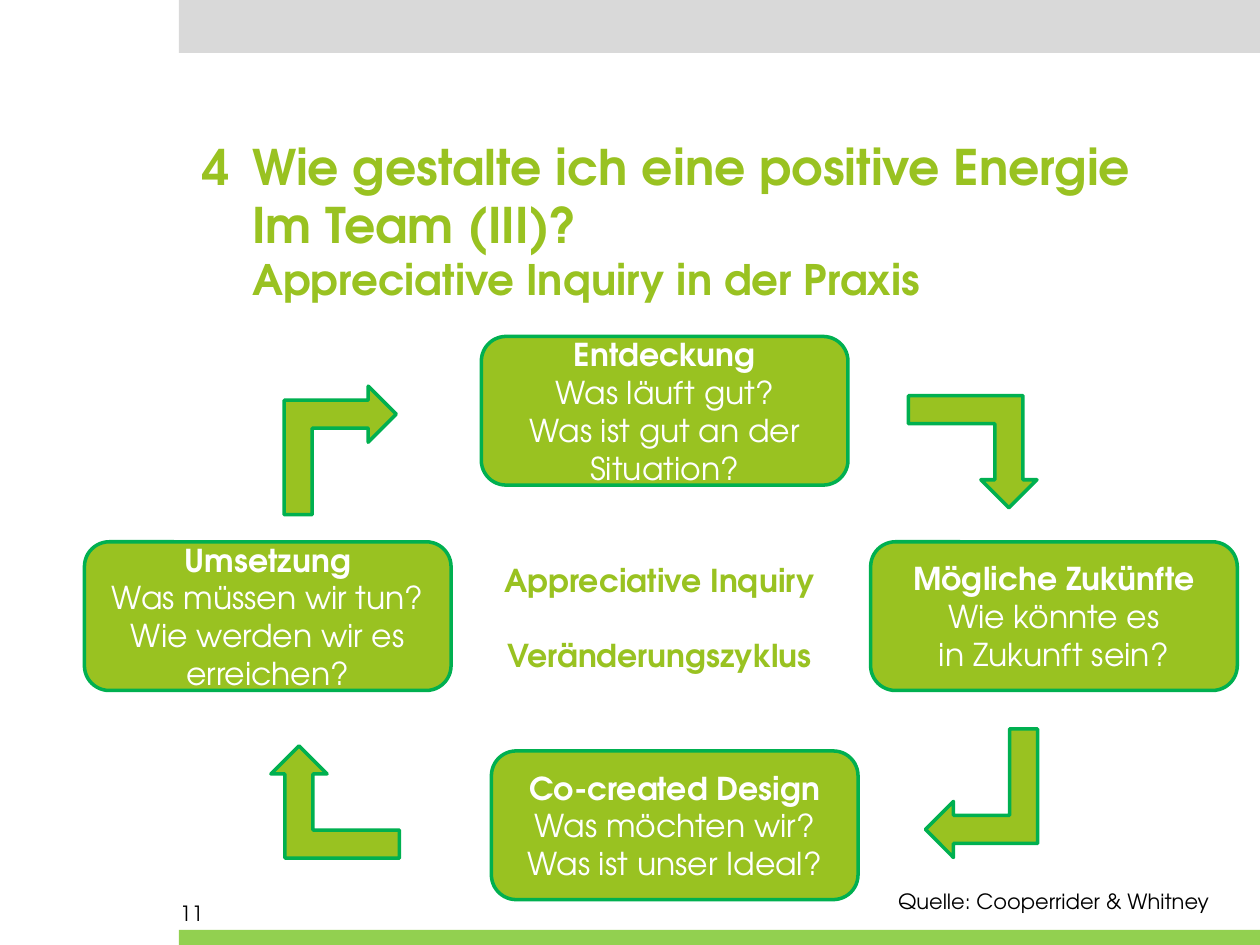
from pptx import Presentation
from pptx.dml.color import RGBColor
from pptx.enum.shapes import MSO_SHAPE as Shape
from pptx.enum.text import MSO_ANCHOR as Anchor, MSO_AUTO_SIZE as Auto, PP_ALIGN as Align
from pptx.util import Inches, Pt

FACE = "TeX Gyre Adventor"
LIME, EDGE, WHITE, BLACK = "99C221", "00B050", "FFFFFF", "000000"

TITLE = [
    ("4 \tWie gestalte ich eine positive Energie", 28),
    ("Im Team (III)?", 28),
    ("Appreciative Inquiry in der Praxis", 24),
]
BANDS = [(0, 0.42, "D9D9D9"), (7.38, 0.12, "92D050")]
STEPS = [
    (3.82, 2.67, "Entdeckung", ["Was läuft gut?", "Was ist gut an der Situation?"]),
    (6.91, 4.3, "Mögliche Zukünfte", ["Wie könnte es\nin Zukunft sein?"]),
    (3.9, 5.96, "Co-created Design", ["Was möchten wir?", "Was ist unser Ideal?"]),
    (0.67, 4.3, "Umsetzung", ["Was müssen wir tun?", "Wie werden wir es erreichen?"]),
]
ARROWS = [(7.21, 3.14), (7.28, 5.85), (2.15, 5.92), (2.19, 3.13)]
CYCLE = ["Appreciative Inquiry", "Veränderungszyklus"]
SOURCE = "Quelle: Cooperrider & Whitney"
PAGE = "11"


def tint(code):
    return RGBColor.from_string(code)


def write(para, text, size, color, bold=False):
    for i, line in enumerate(text.split("\n")):
        if i:
            para.add_line_break()
        run = para.add_run()
        run.text = line
        font = run.font
        font.name, font.size, font.bold = FACE, Pt(size), bold
        font.color.rgb = tint(color)


def fill(frame, lines, size, color, align=Align.LEFT, gap=0):
    for i, (text, bold) in enumerate(lines):
        para = frame.add_paragraph() if i else frame.paragraphs[0]
        para.alignment = align
        if i and gap:
            para.space_before = Pt(gap)
        write(para, text, size, color, bold)


def draw(slide, kind, box, color, edge=None):
    shape = slide.shapes.add_shape(kind, *map(Inches, box))
    shape.shadow.inherit = False
    shape.fill.solid()
    shape.fill.fore_color.rgb = tint(color)
    if edge:
        shape.line.color.rgb = tint(edge)
        shape.line.width = Pt(2)
    else:
        shape.line.fill.background()
    return shape


def label(slide, box, *args, wrap=False, **more):
    frame = slide.shapes.add_textbox(*map(Inches, box)).text_frame
    frame.word_wrap = wrap
    fill(frame, *args, **more)


def head(slide):
    title = slide.shapes.title
    title.left, title.top, title.width, title.height = map(Inches, (1.61, 1.08, 8.34, 0.83))
    frame = title.text_frame
    frame.margin_left = frame.margin_right = frame.margin_top = frame.margin_bottom = 0
    frame.vertical_anchor, frame.auto_size, frame.word_wrap = Anchor.TOP, Auto.NONE, True
    para = frame.paragraphs[0]
    para.alignment = Align.LEFT
    props = para._p.get_or_add_pPr()
    props.set("marL", str(Inches(0.39)))
    props.set("indent", str(-Inches(0.39)))
    for i, (text, size) in enumerate(TITLE):
        if i:
            para.add_line_break()
        write(para, text, size, LIME, True)


def main():
    """Build the slide on the Appreciative Inquiry cycle."""
    deck = Presentation()
    deck.slide_width, deck.slide_height = Inches(10), Inches(7.5)
    slide = deck.slides.add_slide(deck.slide_layouts[5])
    for top, high, color in BANDS:
        draw(slide, Shape.RECTANGLE, (1.42, top, 8.58, high), color)
    head(slide)
    label(slide, (1.33, 7.1, 2.33, 0.4), [(PAGE, False)], 12, BLACK, wrap=True)
    for left, top, name, asks in STEPS:
        card = draw(slide, Shape.ROUNDED_RECTANGLE, (left, top, 2.91, 1.18), LIME, EDGE)
        card.text_frame.vertical_anchor = Anchor.MIDDLE
        lines = [(name, True)] + [(ask, False) for ask in asks]
        fill(card.text_frame, lines, 18, WHITE, Align.CENTER)
    for turn, (left, top) in enumerate(ARROWS):
        arrow = draw(slide, Shape.BENT_UP_ARROW, (left, top, 1.02, 0.89), LIME, EDGE)
        arrow.rotation = 90 * turn
        arrow._element.spPr.get_or_add_xfrm().set("flipV", "1")
    label(slide, (3.89, 4.4, 2.69, 1.01), [(text, True) for text in CYCLE],
          18, LIME, Align.CENTER, gap=21.5)
    label(slide, (7.03, 7, 2.75, 0.3), [(SOURCE, False)], 12, BLACK)
    deck.save("out.pptx")


if __name__ == "__main__":
    main()
